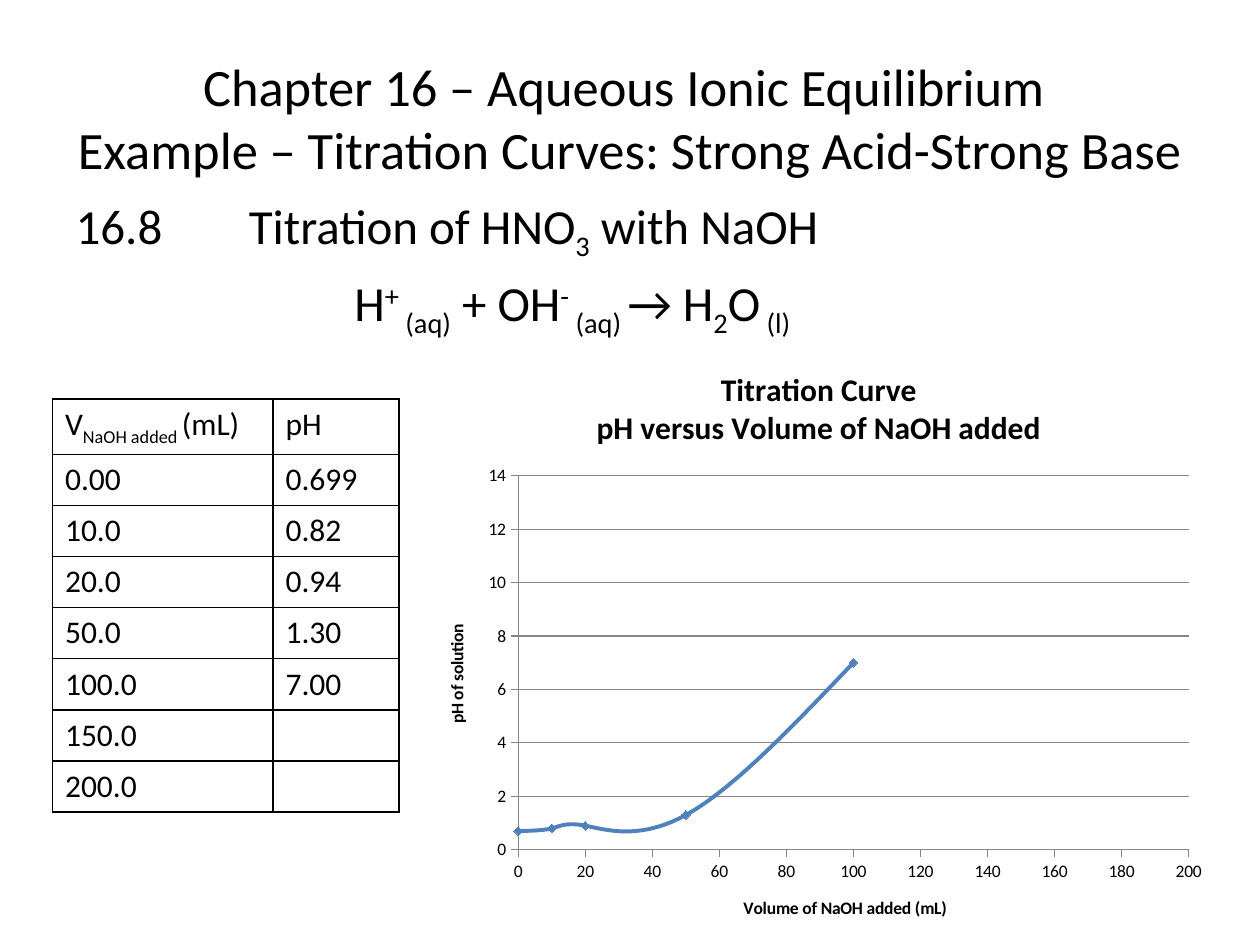
"""Build the titration curve slide: reaction, table of pH values and scatter chart."""
from lxml.etree import SubElement
from pptx import Presentation
from pptx.chart.data import XyChartData
from pptx.dml.color import RGBColor
from pptx.enum.chart import XL_CHART_TYPE as ChartType, XL_MARKER_STYLE as Marker, XL_TICK_MARK as Tick
from pptx.enum.text import MSO_ANCHOR as Anchor, MSO_AUTO_SIZE as AutoSize, PP_ALIGN as Align
from pptx.oxml.ns import qn
from pptx.util import Inches, Pt

COLORS = {"text": "000000", "border": "000000", "curve": "4F81BD", "grid": "868686", "page": "FFFFFF"}
SUB, SUP = -25, 30


def set_font(font, size, bold=False):
    for key, value in {"name": "Calibri", "size": Pt(size), "bold": bold}.items():
        setattr(font, key, value)
    font.color.rgb = RGBColor.from_string(COLORS["text"])


def write_runs(paragraph, parts, size):
    for text, shift in parts:
        run = paragraph.add_run()
        run.text = text
        set_font(run.font, size)
        if shift:
            run._r.get_or_add_rPr().set("baseline", str(shift * 1000))


deck = Presentation()
deck.slide_width, deck.slide_height = Inches(10), Inches(7.5)
W, H = deck.slide_width, deck.slide_height
slide = deck.slides.add_slide(deck.slide_layouts[1])
slide.background.fill.solid()
slide.background.fill.fore_color.rgb = RGBColor.from_string(COLORS["page"])

heading, reaction = slide.placeholders
for holder, top, height, anchor in (
    (heading, 0.04, 1.25 / 7.5, Anchor.MIDDLE),
    (reaction, 0.2, 0.66, Anchor.TOP),
):
    box = {"left": W * 0.05, "top": H * top, "width": W * 0.9, "height": H * height}
    for key, value in box.items():
        setattr(holder, key, int(value))
    frame = {"auto_size": AutoSize.NONE, "word_wrap": True, "vertical_anchor": anchor}
    for key, value in frame.items():
        setattr(holder.text_frame, key, value)

heading.text_frame.text = "Chapter 16 – Aqueous Ionic Equilibrium \vExample – Titration Curves: Strong Acid-Strong Base"
heading_line = heading.text_frame.paragraphs[0]
heading_line.alignment = Align.CENTER
for run in heading_line.runs:
    set_font(run.font, 30)

statements = [
    (Align.JUSTIFY, [("16.8\tTitration of HNO", 0), ("3", SUB), (" with NaOH", 0)]),
    (Align.CENTER, [("H", 0), ("+", SUP), (" (aq)", SUB), (" + OH", 0), ("-", SUP), (" (aq) ", SUB),
                    ("→ H", 0), ("2", SUB), ("O", 0), (" (l)\t", SUB)]),
]
for index, (alignment, parts) in enumerate(statements):
    body = reaction.text_frame
    line = body.add_paragraph() if index else body.paragraphs[0]
    line.alignment = alignment
    layout = line._p.get_or_add_pPr()
    layout.set("defTabSz", str(Inches(1)))
    SubElement(layout, qn("a:buNone"))
    write_runs(line, parts, 28)

volumes = ["0.00", "10.0", "20.0", "50.0", "100.0", "150.0", "200.0"]
readings = ["0.699", "0.82", "0.94", "1.30", "7.00", "", ""]
rows = [([("V", 0), ("NaOH added ", SUB), ("(mL)", 0)], [("pH", 0)])]
rows += [([(volume, 0)], [(reading, 0)]) for volume, reading in zip(volumes, readings)]
row_height = Inches(0.4)
measurements = slide.shapes.add_table(
    len(rows), 2, W // 24, H * 19 // 45, Inches(2.75), row_height * len(rows)).table
measurements.first_row = measurements.horz_banding = False
for column, width in zip(measurements.columns, (1.75, 1)):
    column.width = Inches(width)
for r, row in enumerate(rows):
    measurements.rows[r].height = row_height
    for c, parts in enumerate(row):
        cell = measurements.cell(r, c)
        set_font(cell.text_frame.paragraphs[0].font, 18)
        if parts[0][0]:
            write_runs(cell.text_frame.paragraphs[0], parts, 18)
        borders = cell._tc.get_or_add_tcPr()
        for side in ("lnL", "lnR", "lnT", "lnB"):
            edge = SubElement(borders, qn(f"a:{side}"), w=str(Pt(1)))
            SubElement(SubElement(edge, qn("a:solidFill")), qn("a:srgbClr"), val=COLORS["border"])
        cell.fill.background()

curve_data = XyChartData()
points = curve_data.add_series("Series 1")
for volume, reading in zip(volumes, readings):
    if reading:
        points.add_data_point(float(volume), round(float(reading), 1))
chart = slide.shapes.add_chart(
    ChartType.XY_SCATTER_SMOOTH, W // 3, Inches(2.75), Inches(6.33), Inches(4.75), curve_data).chart
set_font(chart.font, 10)
chart.has_legend = False
chart.has_title = True
chart.chart_title.include_in_layout = False
chart.chart_title.text_frame.text = "Titration Curve\npH versus Volume of NaOH added"
for line in chart.chart_title.text_frame.paragraphs:
    set_font(line.runs[0].font, 18, True)

for axis, label, top_value, step, grid in (
    (chart.category_axis, "Volume of NaOH added (mL)", 200, 20, False),
    (chart.value_axis, "pH of solution", 14, 2, True),
):
    scale = {"minimum_scale": 0, "maximum_scale": top_value, "major_unit": step,
             "has_major_gridlines": grid, "major_tick_mark": Tick.OUTSIDE,
             "minor_tick_mark": Tick.NONE, "has_title": True}
    for key, value in scale.items():
        setattr(axis, key, value)
    axis.tick_labels.number_format = "General"
    axis.tick_labels.number_format_is_linked = False
    axis.axis_title.text_frame.text = label
    set_font(axis.axis_title.text_frame.paragraphs[0].runs[0].font, 10, True)
    for stroke in [axis.format.line] + ([axis.major_gridlines.format.line] if grid else []):
        stroke.color.rgb = RGBColor.from_string(COLORS["grid"])
        stroke.width = Pt(0.75)

curve = chart.plots[0].series[0]
chart.plots[0].vary_by_categories = False
curve._element.get_or_add_smooth().val = True
curve.format.line.width = Pt(2.25)
curve.marker.style, curve.marker.size = Marker.DIAMOND, 5
curve.marker.format.fill.solid()
for tint in (curve.format.line.color, curve.marker.format.fill.fore_color, curve.marker.format.line.color):
    tint.rgb = RGBColor.from_string(COLORS["curve"])

deck.save("out.pptx")
